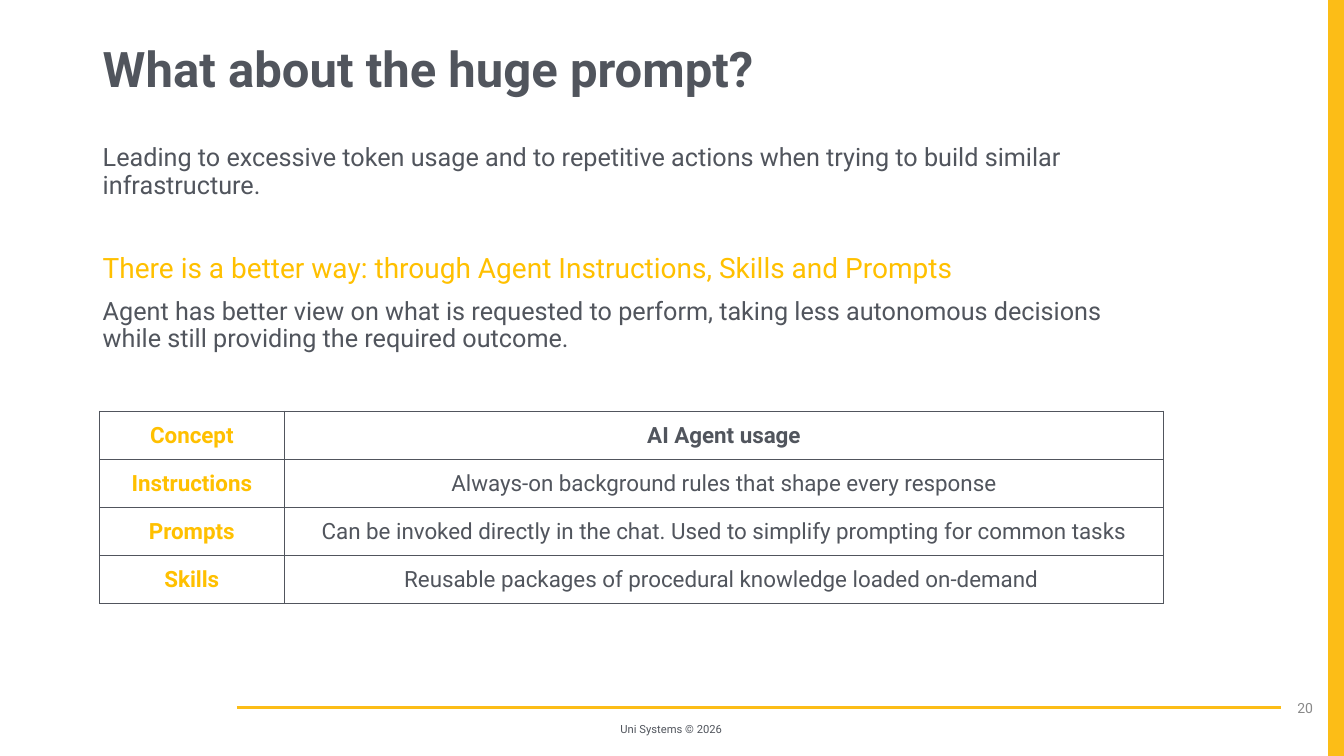
"""Builds a slide on replacing a huge prompt with instructions, prompts and skills."""
from lxml import etree
from pptx import Presentation
from pptx.dml.color import RGBColor
from pptx.enum import shapes, text
from pptx.oxml import ns
from pptx.util import Cm, Pt

GREY = RGBColor(0x51, 0x55, 0x5D)
AMBER = RGBColor(0xFF, 0xC0, 0x00)
BRAND = RGBColor(0xFC, 0xBD, 0x17)
PALE = RGBColor(0x89, 0x89, 0x89)
CENTER = text.PP_ALIGN.CENTER
MIDDLE = text.MSO_ANCHOR.MIDDLE


def write(p, words, size, color, bold=False, align=None):
    p.text = words
    p.alignment = align
    p.font.name = "Roboto"
    p.font.size = Pt(size)
    p.font.bold = bold
    p.font.color.rgb = color


def add_box(left, top, width, height, anchor=text.MSO_ANCHOR.TOP):
    tf = s.shapes.add_textbox(Cm(left), Cm(top), Cm(width), Cm(height)).text_frame
    tf.word_wrap = True
    tf.vertical_anchor = anchor
    return tf


prs = Presentation()
prs.slide_width, prs.slide_height = Cm(33.87), Cm(19.05)
s = prs.slides.add_slide(prs.slide_layouts[6])

rule = s.shapes.add_connector(
    shapes.MSO_CONNECTOR.STRAIGHT, Cm(5.97), Cm(17.83), Cm(32.28), Cm(17.83))
rule.line.color.rgb = BRAND
rule.line.width = Pt(1.5)
etree.SubElement(rule._element.spPr, ns.qn("a:effectLst"))

band = s.shapes.add_shape(
    shapes.MSO_SHAPE.RECTANGLE, Cm(33.47), 0, Cm(0.4), prs.slide_height)
band.shadow.inherit = False
band.fill.solid()
band.fill.fore_color.rgb = BRAND
band.line.fill.background()

footer = add_box(15.37, 18.06, 3.1, 0.61, MIDDLE)
footer.word_wrap = False
write(footer.paragraphs[0], "Uni Systems © 2026", 8, GREY, align=CENTER)
number = add_box(32.33, 17.3, 1.12, 1.07, MIDDLE)
number.word_wrap = False
write(number.paragraphs[0], "20", 10, PALE, align=CENTER)

title = add_box(2.34, 1.02, 22.33, 1.65).paragraphs[0]
write(title, "What about the huge prompt?", 35, GREY, bold=True)
title.line_spacing = 0.9

body = add_box(2.34, 3.53, 26.82, 5.99)
for i, (words, size, color, before) in enumerate([
    ("Leading to excessive token usage and to repetitive actions when trying to "
     "build similar infrastructure.", 18, GREY, 0),
    ("There is a better way: through Agent Instructions, Skills and Prompts",
     20, AMBER, 39),
    ("Agent has better view on what is requested to perform, taking less autonomous "
     "decisions while still providing the required outcome.", 18, GREY, 10),
]):
    p = body.add_paragraph() if i else body.paragraphs[0]
    write(p, words, size, color)
    p.line_spacing = 0.9
    p.space_before = Pt(before)

concepts = [
    ("Concept", "AI Agent usage"),
    ("Instructions", "Always-on background rules that shape every response"),
    ("Prompts", "Can be invoked directly in the chat. Used to simplify prompting "
                "for common tasks"),
    ("Skills", "Reusable packages of procedural knowledge loaded on-demand "),
]
table = s.shapes.add_table(
    len(concepts), 2, Cm(2.51), Cm(10.36), Cm(26.82), Cm(4.84)).table
table.first_row = table.horz_banding = False
table.columns[0].width, table.columns[1].width = Cm(4.65), Cm(22.17)
for i, row in enumerate(concepts):
    table.rows[i].height = Cm(1.21)
    for j, words in enumerate(row):
        cell = table.cell(i, j)
        cell.vertical_anchor = MIDDLE
        cell.margin_left = cell.margin_right = cell.margin_top = Cm(0.02)
        cell.margin_bottom = 0
        cell.fill.background()
        write(cell.text_frame.paragraphs[0], words, 16, GREY if j else AMBER,
              bold=i == 0 or j == 0, align=CENTER)
        tc_pr = cell._tc.get_or_add_tcPr()
        for k, side in enumerate(("lnL", "lnR", "lnT", "lnB")):
            edge = etree.Element(ns.qn(f"a:{side}"), w=str(Pt(1)))
            fill = etree.SubElement(edge, ns.qn("a:solidFill"))
            etree.SubElement(fill, ns.qn("a:srgbClr"), val=str(GREY))
            tc_pr.insert(k, edge)

prs.save("out.pptx")
